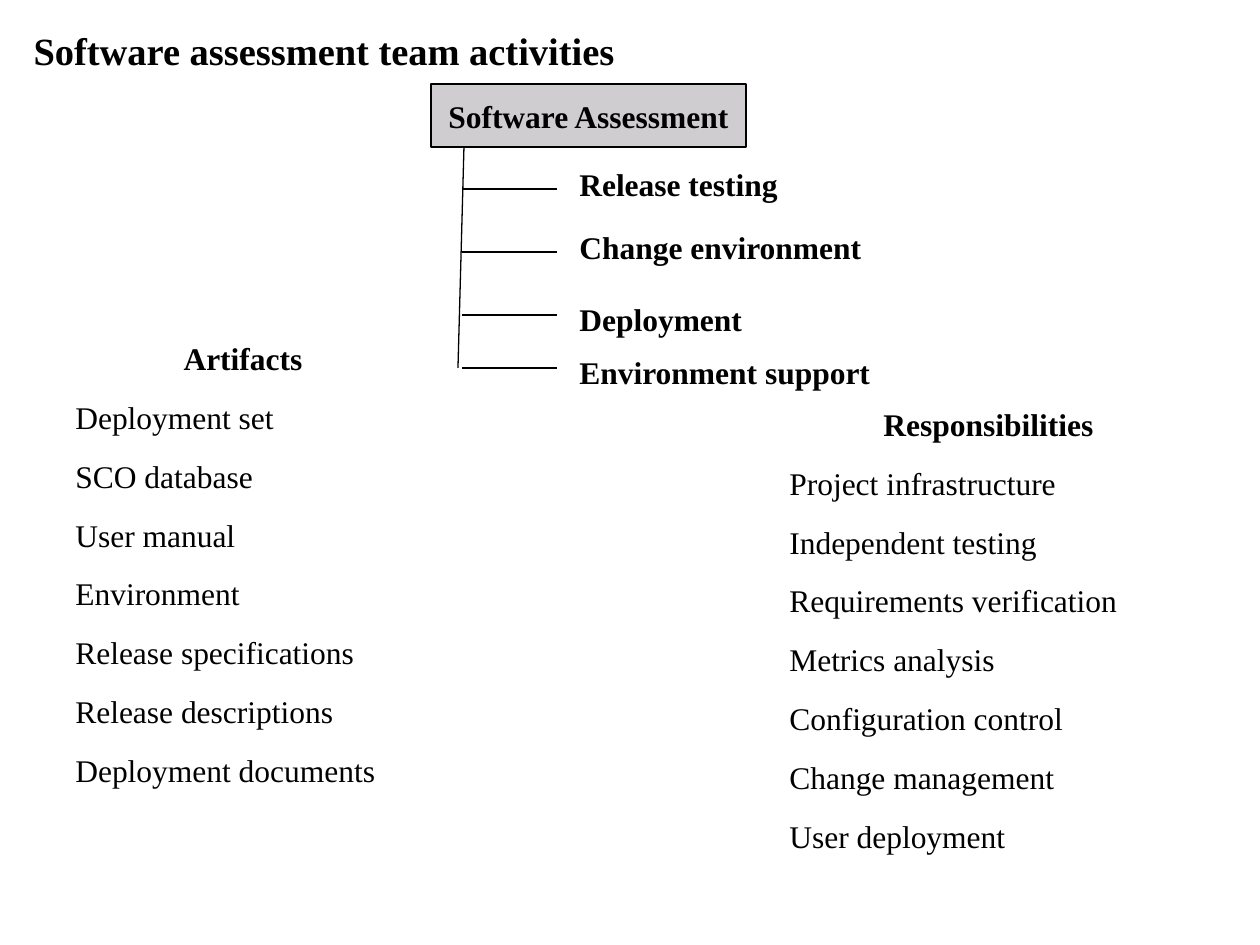
import pptx
import pptx.dml.color
import pptx.enum.shapes
import pptx.enum.text
import pptx.oxml
import pptx.util

SCALE = 914400 / 126
FACE = "Times New Roman"
BLACK = "000000"
ALIGN = pptx.enum.text.PP_ALIGN
ANCHOR = pptx.enum.text.MSO_ANCHOR

TASKS = [
    ("Release testing", 105, 75),
    ("Change environment", 168, 138),
    ("Deployment", 231, 210),
    ("Environment support", 284, 263),
]
ARTIFACTS = [
    "Deployment set",
    "SCO database",
    "User manual",
    "Environment",
    "Release specifications",
    "Release descriptions",
    "Deployment documents",
]
DUTIES = [
    "Project infrastructure",
    "Independent testing",
    "Requirements verification",
    "Metrics analysis",
    "Configuration control",
    "Change management",
    "User deployment",
]


def px(*sizes):
    return [round(size * SCALE) for size in sizes]


def color(code):
    return pptx.dml.color.RGBColor.from_string(code)


def assign(item, values):
    for name, value in values.items():
        setattr(item, name, value)


def write(para, text, size=18, bold=True, align=ALIGN.LEFT, gap=0):
    run = para.add_run()
    run.text = text
    assign(run.font, {"name": FACE, "size": pptx.util.Pt(size), "bold": bold})
    run.font.color.rgb = color(BLACK)
    assign(para, {"alignment": align, "space_before": pptx.util.Pt(gap)})


def stroke(line):
    line.color.rgb = color(BLACK)
    line.width = pptx.util.Pt(0.75)


def draw_line(slide, *ends):
    kind = pptx.enum.shapes.MSO_CONNECTOR.STRAIGHT
    line = slide.shapes.add_connector(kind, *px(*ends))
    stroke(line.line)
    line._element.spPr.append(pptx.oxml.parse_xml(
        '<a:effectLst xmlns:a="http://schemas.openxmlformats.org/drawingml/2006/main"/>'
    ))


def add_text(slide, box):
    frame = slide.shapes.add_textbox(*px(*box)).text_frame
    frame.word_wrap = True
    return frame


def add_title(slide, box, text):
    title = slide.shapes.title
    assign(title, dict(zip(("left", "top", "width", "height"), px(*box))))
    assign(title.text_frame, {"word_wrap": True, "vertical_anchor": ANCHOR.TOP})
    write(title.text_frame.paragraphs[0], text, size=22, gap=4)


def add_tree(slide, box, head, tasks):
    left, top, width, height = box
    kind = pptx.enum.shapes.MSO_SHAPE.RECTANGLE
    root = slide.shapes.add_shape(kind, *px(*box))
    root.shadow.inherit = False
    root.fill.solid()
    root.fill.fore_color.rgb = color("D0CDD1")
    stroke(root.line)
    assign(root.text_frame, {"word_wrap": False, "vertical_anchor": ANCHOR.MIDDLE})
    write(root.text_frame.paragraphs[0], head, align=ALIGN.CENTER)

    end = top + tasks[-1][1]
    draw_line(slide, left + 33, top + height, left + 27, end)
    for text, level, place in tasks:
        draw_line(slide, left + 31, top + level, left + 126, top + level)
        frame = add_text(slide, (left + 136, top + place, 340, 50))
        write(frame.paragraphs[0], text, gap=9)


def add_list(slide, box, head, items):
    frame = add_text(slide, box)
    write(frame.paragraphs[0], head, align=ALIGN.CENTER, gap=12)
    for item in items:
        write(frame.add_paragraph(), item, bold=False, gap=12)


def main():
    deck = pptx.Presentation()
    assign(deck, dict(zip(("slide_width", "slide_height"), px(1260, 945))))
    slide = deck.slides.add_slide(deck.slide_layouts[5])
    add_title(slide, (21, 21, 1218, 58), "Software assessment team activities")
    add_tree(slide, (431, 84, 315, 63), "Software Assessment", TASKS)
    add_list(slide, (63, 333, 368, 466), "Artifacts ", ARTIFACTS)
    add_list(slide, (777, 399, 431, 466), "Responsibilities ", DUTIES)
    deck.save("out.pptx")


if __name__ == "__main__":
    main()
